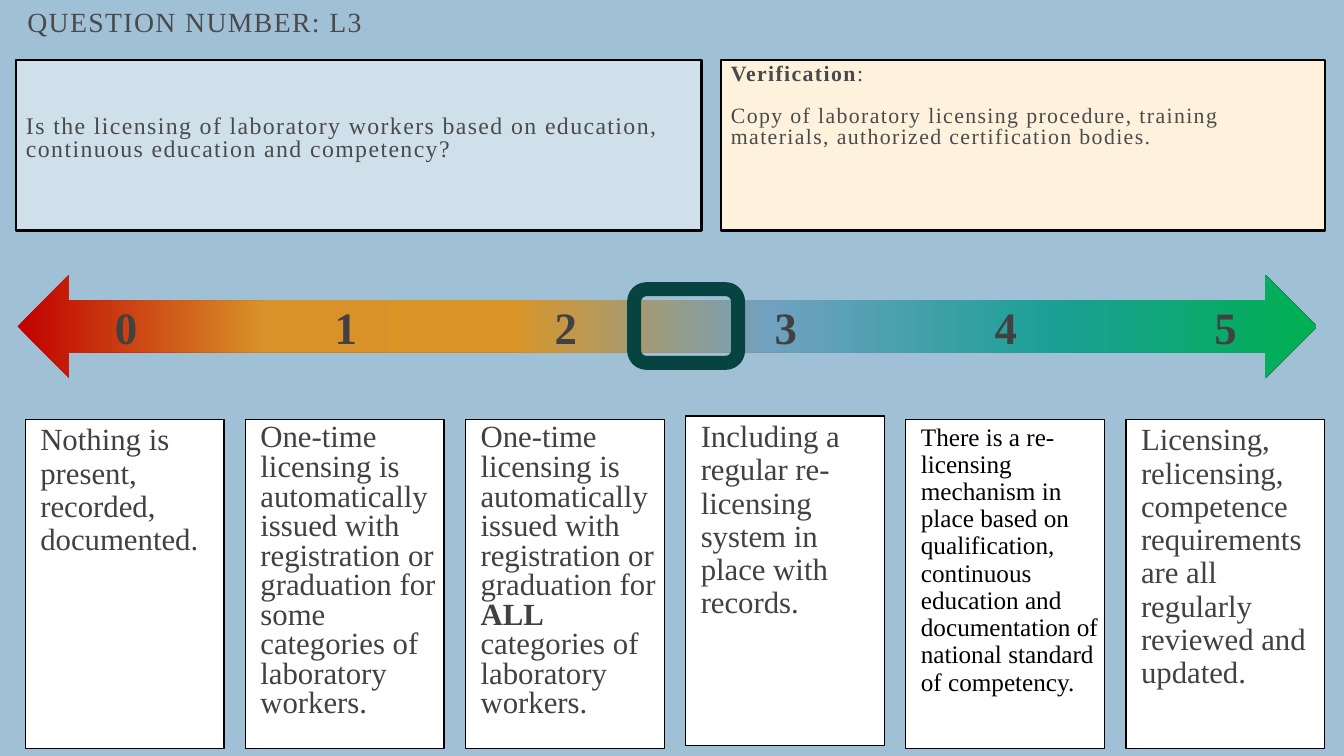
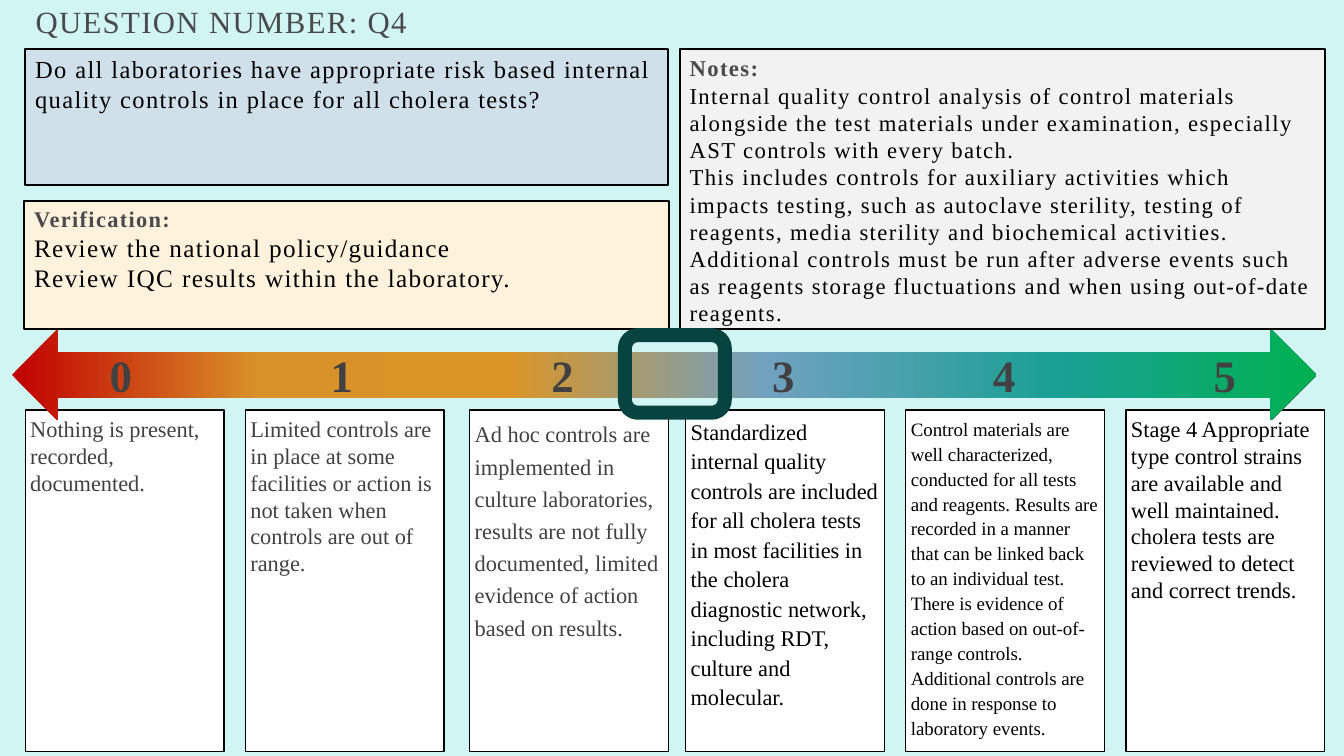
from lxml import etree
from pptx import Presentation
from pptx.dml.color import RGBColor
from pptx.enum.shapes import MSO_SHAPE as Shape
from pptx.enum.text import MSO_ANCHOR as Anchor, PP_ALIGN as Align
from pptx.oxml.ns import qn
from pptx.util import Pt

# Shared style
FONT = "Times New Roman"
BLACK, GREY, DARK, WHITE = "000000", "4A4A4C", "414142", "FFFFFF"
BLUE, CREAM, SILVER, FRAME = "CFE0EA", "FEF2DD", "F2F2F2", "074441"
SCALE_STOPS = [(0, "C00000"), (19, "D99229"), (38, "DA9527"),
               (58, "70A1C0"), (80, "1AA095"), (100, "00B050")]
SCORES = range(6)
CARD_LEFT, CARD_STEP, CARD_WIDTH = 18, 157.25, 142
HEADING = {"bold": True, "color": GREY}

# Content: a paragraph is a string or a list of (text, run format) pairs;
# every place is (left, top, width, height) in points
SLIDES = [
    {
        "background": "A0C1D5",
        "title": ("QUESTION NUMBER: L3", (12.4, 4.3, 358.6, 32.4), 19.8),
        "panels": [
            ((11.5, 43, 489.6, 121.7), BLUE,
             ["Is the licensing of laboratory workers based on education, "
              "continuous education and competency?"],
             {"size": 17, "color": GREY, "line": 0.8, "top": 40.3}),
            ((515, 43, 431.3, 121.7), CREAM,
             [[("Verification", HEADING), (":", {})],
              "Copy of laboratory licensing procedure, training materials, "
              "authorized certification bodies."],
             {"size": 15.6, "color": GREY, "line": 0.8, "gap": 15}),
        ],
        "card_top": 299.5, "card_height": 235.4,
        "card_format": {"size": 22, "line": 0.9, "indent": 7.2},
        "cards": [
            (["Nothing is present, recorded, documented."], {}, (0, 0)),
            (["One-time licensing is automatically issued with registration or "
              "graduation for some categories of laboratory workers."],
             {"line": 0.8}, (0, 0)),
            ([[("One-time licensing is automatically issued with registration or "
                "graduation for ", {}), ("ALL", {"bold": True}),
               (" categories of laboratory workers.", {})]],
             {"line": 0.8}, (0, 0)),
            (["Including a regular re-licensing system in place with records."],
             {}, (0, -2.3)),
            (["There is a re-licensing mechanism in place based on qualification, "
              "continuous education and documentation of national standard of "
              "competency."], {"size": 18, "color": BLACK}, (0, 0)),
            (["Licensing, relicensing, competence requirements are all regularly "
              "reviewed and updated."], {}, (0, 0)),
        ],
        "arrow": (12.5, 196.4, 928, 73.6),
        "digits": (64.1, 221.5, 51.8, 23.8), "digit_step": 157.1,
        "frame": (453, 206.6, 74.2, 52.6),
    },
    {
        "background": "D0F5F3",
        "title": ("QUESTION NUMBER: Q4", (18.3, 3.6, 372.2, 32.4), 22),
        "panels": [
            ((18, 35.2, 459.4, 97.2), BLUE,
             ["Do all laboratories have appropriate risk based internal quality "
              "controls in place for all cholera tests?"],
             {"size": 17.5, "color": BLACK}),
            ((485.5, 35.2, 460.8, 200), SILVER,
             [[("Notes:", HEADING)],
              "Internal quality control analysis of control materials alongside "
              "the test materials under examination, especially AST controls "
              "with every batch.",
              "This includes controls for auxiliary activities which impacts "
              "testing, such as autoclave sterility, testing of reagents, media "
              "sterility and biochemical activities.",
              "Additional controls must be run after adverse events such as "
              "reagents storage fluctuations and when using out-of-date "
              "reagents."],
             {"size": 16.2, "color": BLACK}),
            ((17.3, 143.3, 460.8, 92), CREAM,
             [[("Verification:", {**HEADING, "size": 16})],
              "Review the national policy/guidance",
              "Review IQC results within the laboratory."],
             {"size": 18, "color": BLACK}),
        ],
        "card_top": 293, "card_height": 244,
        "card_format": {"size": 16},
        "cards": [
            (["Nothing is present, recorded, documented."], {}, (0, 0)),
            (["Limited controls are in place at some facilities or action is not "
              "taken when controls are out of range."], {}, (0, 0)),
            (["Ad hoc controls are implemented in culture laboratories, results "
              "are not fully documented, limited evidence of action based on "
              "results."], {"line": 1.2}, (3, 0)),
            (["Standardized internal quality controls are included for all "
              "cholera tests in most facilities in the cholera diagnostic "
              "network, including RDT, culture and molecular."],
             {"line": 1.1, "color": BLACK}, (0, 0)),
            (["Control materials are well characterized, conducted for all tests "
              "and reagents. Results are recorded in a manner that can be linked "
              "back to an individual test. There is evidence of action based on "
              "out-of-range controls. Additional controls are done in response "
              "to laboratory events."],
             {"line": 1.1, "size": 13.5, "color": BLACK}, (0, 0)),
            (["Stage 4 Appropriate type control strains are available and well "
              "maintained. cholera tests are reviewed to detect and correct "
              "trends."], {"color": BLACK}, (0, 0)),
        ],
        "arrow": (8.6, 235.4, 931.7, 64.8),
        "digits": (60.5, 257, 51.8, 20.9), "digit_step": 157.7,
        "frame": (446.4, 239.4, 71.3, 55.4),
    },
]


def rgb(value):
    return RGBColor.from_string(value)


def points(place):
    return [Pt(length) for length in place]


def write(box, paragraphs, size, color=DARK, bold=False, line=1.0, gap=0,
          indent=0, spacing=0, align=Align.LEFT, anchor=Anchor.TOP,
          side=7.2, top=3.6):
    """Fill a box with formatted paragraphs."""
    frame = box.text_frame
    frame.word_wrap = True
    frame.vertical_anchor = anchor
    frame.margin_left = frame.margin_right = Pt(side)
    frame.margin_top, frame.margin_bottom = Pt(top), Pt(3.6)
    for index, content in enumerate(paragraphs):
        para = frame.add_paragraph() if index else frame.paragraphs[0]
        para.alignment = align
        para.line_spacing = line
        if index and gap:
            para.space_before = Pt(gap)
        if indent:
            para._p.get_or_add_pPr().set("marL", str(Pt(indent)))
        runs = [(content, {})] if isinstance(content, str) else content
        for text, own in runs:
            span = para.add_run()
            span.text = text
            span.font.name = FONT
            span.font.size = Pt(own.get("size", size))
            span.font.bold = own.get("bold", bold)
            span.font.color.rgb = rgb(own.get("color", color))
            if spacing:
                span._r.get_or_add_rPr().set("spc", str(spacing * 100))


def add_shape(page, kind, place, fill=None, line=None, width=1):
    shape = page.shapes.add_shape(kind, *points(place))
    shape.shadow.inherit = False
    if fill:
        shape.fill.solid()
        shape.fill.fore_color.rgb = rgb(fill)
    else:
        shape.fill.background()
    if line:
        shape.line.color.rgb = rgb(line)
        shape.line.width = Pt(width)
    else:
        shape.line.fill.background()
    return shape


def set_gradient(shape, stops):
    shape.fill.gradient()
    shape.fill.gradient_angle = 0
    stop_list = shape._element.spPr.find(qn("a:gradFill")).find(qn("a:gsLst"))
    for old in list(stop_list):
        stop_list.remove(old)
    for position, color in stops:
        stop = etree.SubElement(stop_list, qn("a:gs"), pos=str(position * 1000))
        etree.SubElement(stop, qn("a:srgbClr"), val=color)


def add_page(deck, data):
    page = deck.slides.add_slide(deck.slide_layouts[6])
    page.background.fill.solid()
    page.background.fill.fore_color.rgb = rgb(data["background"])

    # Title
    title, place, size = data["title"]
    write(page.shapes.add_textbox(*points(place)), [title], size=size,
          color=GREY, line=0.8, spacing=1)

    # Answer cards
    for score, (paragraphs, own, (right, down)) in enumerate(data["cards"]):
        place = (CARD_LEFT + score * CARD_STEP + right, data["card_top"] + down,
                 CARD_WIDTH, data["card_height"])
        card = add_shape(page, Shape.RECTANGLE, place, WHITE, BLACK)
        write(card, paragraphs, side=3.6, **{**data["card_format"], **own})

    # Question, verification and notes
    for place, fill, paragraphs, style in data["panels"]:
        panel = add_shape(page, Shape.RECTANGLE, place, fill, BLACK, 1.5)
        write(panel, paragraphs, spacing=1, **style)

    # Score scale with its marker frame
    set_gradient(add_shape(page, Shape.LEFT_RIGHT_ARROW, data["arrow"]),
                 SCALE_STOPS)
    left, top, width, height = data["digits"]
    for score in SCORES:
        place = (left + score * data["digit_step"], top, width, height)
        write(page.shapes.add_textbox(*points(place)), [str(score)], size=32,
              bold=True, align=Align.CENTER, anchor=Anchor.MIDDLE)
    add_shape(page, Shape.ROUNDED_RECTANGLE, data["frame"], line=FRAME, width=10)


def main():
    deck = Presentation()
    deck.slide_width, deck.slide_height = Pt(960), Pt(540)
    for data in SLIDES:
        add_page(deck, data)
    deck.save("out.pptx")


if __name__ == "__main__":
    main()
